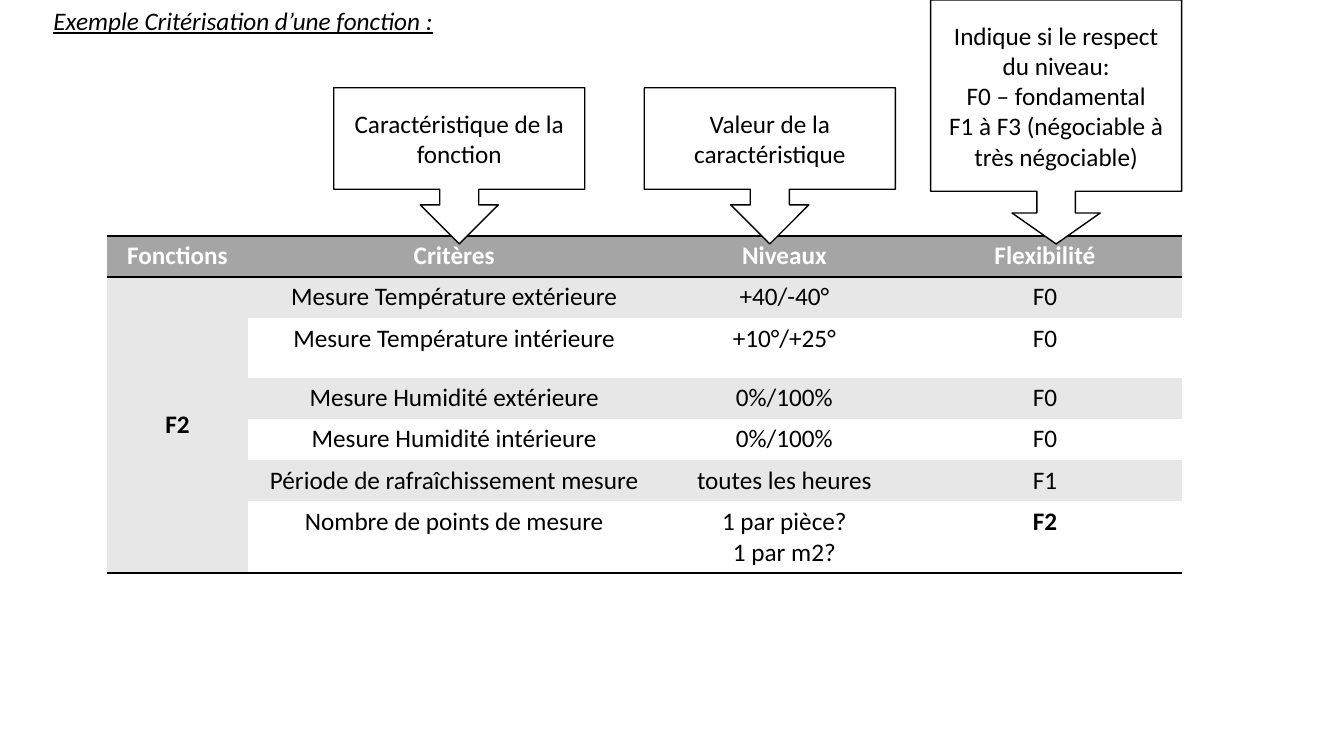
"""Build the slide showing how a function is given criteria, levels and flexibility."""
from lxml.etree import SubElement
from pptx import Presentation
from pptx.dml.color import RGBColor
from pptx.enum.shapes import MSO_SHAPE
from pptx.enum.text import MSO_ANCHOR, MSO_AUTO_SIZE, PP_ALIGN
from pptx.oxml import parse_xml
from pptx.oxml.ns import qn
from pptx.util import Inches, Pt

BLACK = RGBColor(0, 0, 0)
WHITE = RGBColor(255, 255, 255)
GREY = RGBColor(0xA5, 0xA5, 0xA5)
PALE = RGBColor(0xE7, 0xE7, 0xE7)

TITLE = "Exemple Critérisation d’une fonction :"
ROWS = [
    ("Fonctions", "Critères", "Niveaux", "Flexibilité"),
    ("F2", "Mesure Température extérieure", "+40/-40°", "F0"),
    ("", "Mesure Température intérieure", "+10°/+25°", "F0"),
    ("", "Mesure Humidité extérieure", "0%/100%", "F0"),
    ("", "Mesure Humidité intérieure", "0%/100%", "F0"),
    ("", "Période de rafraîchissement mesure", "toutes les heures", "F1"),
    ("", "Nombre de points de mesure", "1 par pièce?\n1 par m2?", "F2"),
]
COLS = [1.4, 4.09, 2.46, 2.71]
HIGH = [0.4, 0.41, 0.59, 0.41, 0.41, 0.41, 0.69]
LEFT, TOP = 1.06, 2.34
TIP, WIDE = 2.42, 2.49
NOTES = [
    (3.31, 0.87, (), "Caractéristique de la fonction"),
    (6.39, 0.87, (), "Valeur de la caractéristique"),
    (9.23, 0, (0.158, 0.181, 0.127, 0.784),
     "Indique si le respect du niveau:\nF0 – fondamental\n"
     "F1 à F3 (négociable à très négociable)"),
]
BASE = {"name": "Calibri", "size": Pt(18), "bold": False}
NO_GRID = "{2D5ABB26-0587-4C30-8999-92F81FD0307C}"


def write(frame, text, align=PP_ALIGN.CENTER, color=BLACK, **looks):
    """Fill a text frame and format every paragraph."""
    frame.text = text
    for para in frame.paragraphs:
        para.alignment = align
        para.font.color.rgb = color
        for run in para.runs:
            run.font.color.rgb = color
            for key, value in {**BASE, **looks}.items():
                setattr(run.font, key, value)


def rule(cell, sides):
    """Draw black two-point rules on the given sides of a cell."""
    props = cell._tc.get_or_add_tcPr()
    for place, side in enumerate(sides):
        line = props.makeelement(qn(f"a:ln{side}"), {"w": str(Pt(2))})
        fill = SubElement(line, qn("a:solidFill"))
        SubElement(fill, qn("a:srgbClr"), val=str(BLACK))
        props.insert(place, line)


def add_title(slide):
    """Place and format the title."""
    title = slide.shapes.title
    spots = {"left": 0.43, "top": 0, "width": 10.75, "height": 1.31}
    for key, value in spots.items():
        setattr(title, key, Inches(value))
    frame = title.text_frame
    write(frame, TITLE, PP_ALIGN.LEFT, italic=True, underline=True)
    frame.vertical_anchor = MSO_ANCHOR.TOP
    frame.auto_size = MSO_AUTO_SIZE.NONE


def add_grid(slide):
    """Build the table of criteria."""
    size = [Inches(n) for n in (LEFT, TOP, sum(COLS), sum(HIGH))]
    shape = slide.shapes.add_table(len(ROWS), len(COLS), *size)
    table = shape.table
    for style in shape.element.iter(qn("a:tableStyleId")):
        style.text = NO_GRID
    for col, width in zip(table.columns, COLS):
        col.width = Inches(width)
    last = len(ROWS) - 1
    for r, row in enumerate(ROWS):
        table.rows[r].height = Inches(HIGH[r])
        for c, text in enumerate(row):
            cell = table.cell(r, c)
            head = r == 0
            write(cell.text_frame, text, color=WHITE if head else BLACK,
                  bold=head or text == "F2")
            cell.fill.solid()
            band = PALE if r % 2 or c == 0 else WHITE
            cell.fill.fore_color.rgb = GREY if head else band
            rule(cell, "TB" if head else "B" if r == last else "")
    key = table.cell(1, 0)
    key.merge(table.cell(last, 0))
    key.vertical_anchor = MSO_ANCHOR.MIDDLE
    rule(key, "B")


def add_note(slide, left, top, shares, text):
    """Add a callout whose arrow ends on the table header."""
    size = [Inches(n) for n in (left, top, WIDE, TIP - top)]
    note = slide.shapes.add_shape(MSO_SHAPE.DOWN_ARROW_CALLOUT, *size)
    for i, share in enumerate(shares):
        note.adjustments[i] = share
    note.shadow.inherit = False
    note.fill.solid()
    note.fill.fore_color.rgb = WHITE
    note.line.color.rgb = BLACK
    note.line.width = Pt(1)
    write(note.text_frame, text)
    note.text_frame.word_wrap = True
    note.text_frame.vertical_anchor = MSO_ANCHOR.MIDDLE


def main():
    """Make and save the deck."""
    deck = Presentation()
    deck.slide_width, deck.slide_height = Inches(13.33), Inches(7.5)
    slide = deck.slides.add_slide(deck.slide_layouts[5])
    add_title(slide)
    add_grid(slide)
    for note in NOTES:
        add_note(slide, *note)
    deck.save("out.pptx")


if __name__ == "__main__":
    main()
